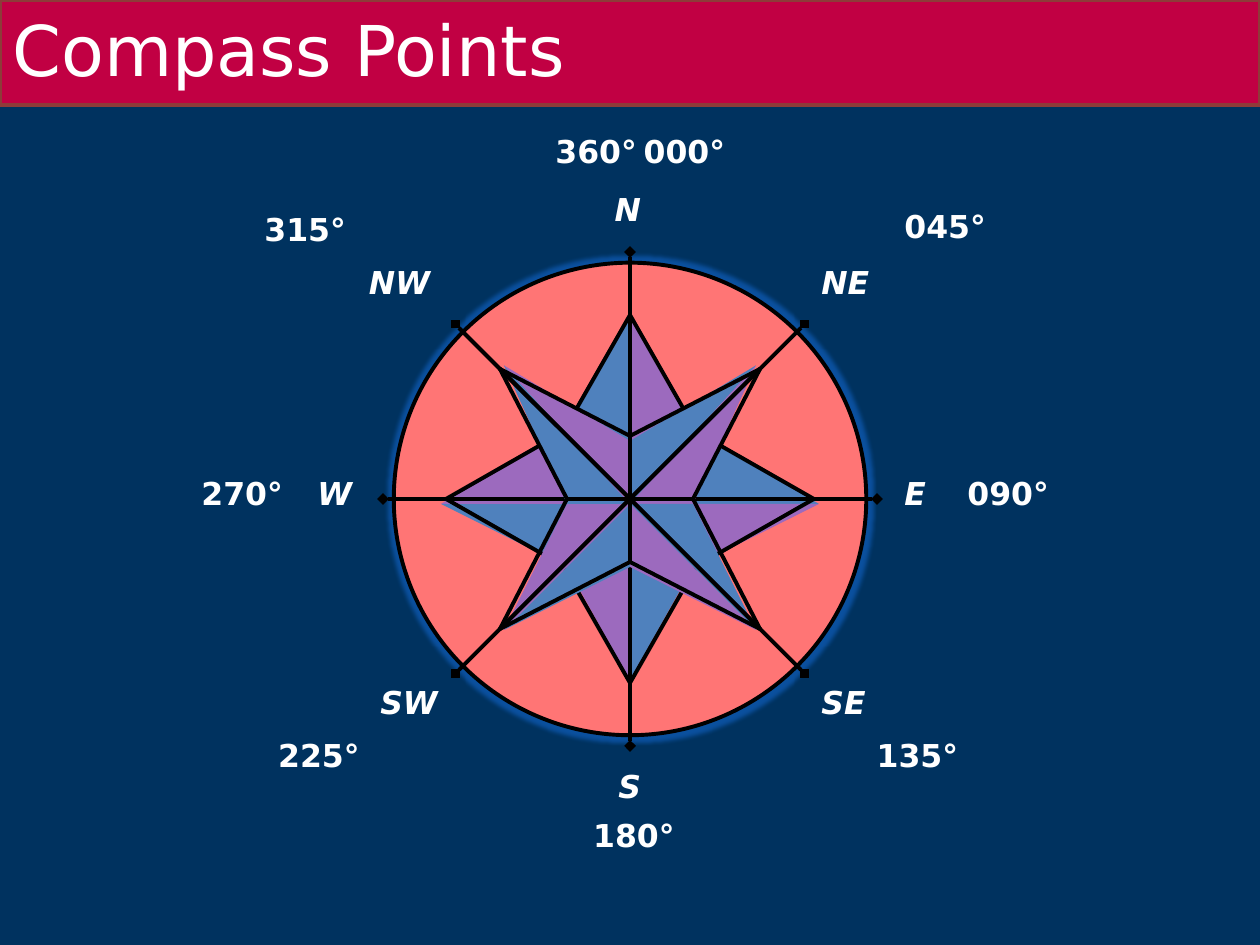
import math
from typing import NamedTuple

import pptx
import pptx.dml.color
import pptx.enum.shapes
import pptx.enum.text
import pptx.oxml
import pptx.oxml.ns
import pptx.util

CELL = pptx.util.Inches(0.1)
COLUMNS, ROWS = 100, 75
CENTRE_COLUMN, CENTRE_ROW = 50, 39.6
DISC_RADIUS, TIP_RADIUS, AXIS_RADIUS = 18.75, 14.6, 19.6
LABEL_ROWS = 4
FONT = "DejaVu Sans"
NAVY, CRIMSON, BROWN, CORAL = "00325F", "C10043", "8E3B39", "FF7575"
BLUE, PURPLE, BLACK, WHITE = "4F81BD", "9C6ABE", "000000", "FFFFFF"
GLOW = "1264C8"


class Point(NamedTuple):
    column: float
    row: float


class Star(NamedTuple):
    first_bearing: int
    shoulder_radius: float


class Label(NamedTuple):
    text: str
    column: float
    row: float
    columns: float
    italic: bool


STARS = [Star(0, 7.5), Star(45, 5)]

NAMES = [
    Label("N", 47.8, 14.6, 4.2, True),
    Label("NE", 64.2, 20.4, 5.9, True),
    Label("E", 70.8, 37.1, 3.7, True),
    Label("SE", 64.2, 53.7, 5.5, True),
    Label("S", 48.1, 60.4, 3.8, True),
    Label("SW", 29.2, 53.7, 6.6, True),
    Label("W", 24.2, 37.1, 4.9, True),
    Label("NW", 28.3, 20.4, 7, True),
]
BEARINGS = [
    Label(text, column, row, 8.9, False)
    for text, column, row in [
        ("000°", 50.1, 10), ("045°", 70.8, 15.9), ("090°", 75.8, 37.1),
        ("135°", 68.6, 57.9), ("180°", 46.1, 64.3), ("225°", 21.1, 57.9),
        ("270°", 15, 37.1), ("315°", 20, 16.2), ("360°", 43.1, 10),
    ]
]


def cells(count: float) -> int:
    return round(count * CELL)


def colour(value: str) -> pptx.dml.color.RGBColor:
    return pptx.dml.color.RGBColor.from_string(value)


def paint(shape, value: str) -> None:
    shape.fill.solid()
    shape.fill.fore_color.rgb = colour(value)


def outline(shape, value: str, points: float) -> None:
    shape.line.color.rgb = colour(value)
    shape.line.width = pptx.util.Pt(points)


def polar(bearing: float, radius: float) -> Point:
    angle = math.radians(bearing)
    return Point(CENTRE_COLUMN + radius * math.sin(angle),
                 CENTRE_ROW - radius * math.cos(angle))


def add_span(para, text: str, size: float, bold: bool = False, italic: bool = False) -> None:
    span = para.add_run()
    span.text = text
    span.font.name = FONT
    span.font.size = pptx.util.Pt(size)
    span.font.bold = bold
    span.font.italic = italic
    span.font.color.rgb = colour(WHITE)


def add_line(shapes, start: Point, end: Point, diamonds: bool = False) -> None:
    line = shapes.add_connector(
        pptx.enum.shapes.MSO_CONNECTOR.STRAIGHT,
        cells(start.column), cells(start.row), cells(end.column), cells(end.row))
    outline(line, BLACK, 2.25)
    properties = line._element.spPr
    pptx.oxml.ns.qn("a:effectLst")
    properties.append(pptx.oxml.parse_xml(
        f'<a:effectLst {pptx.oxml.ns.nsdecls("a")}/>'))
    if diamonds:
        for end_name in ("headEnd", "tailEnd"):
            line.line._get_or_add_ln().append(pptx.oxml.parse_xml(
                f'<a:{end_name} {pptx.oxml.ns.nsdecls("a")} type="diamond"/>'))


def add_facet(shapes, corners: list[Point], fill: str) -> None:
    builder = shapes.build_freeform(corners[0].column, corners[0].row, scale=CELL)
    builder.add_line_segments(corners[1:], close=True)
    facet = builder.convert_to_shape()
    facet.shadow.inherit = False
    paint(facet, fill)
    facet.line.fill.background()


def add_star(page, star: Star) -> None:
    shapes = page.shapes.add_group_shape().shapes
    centre = Point(CENTRE_COLUMN, CENTRE_ROW)
    bearings = [star.first_bearing + 90 * turn for turn in range(4)]
    sides = [(bearing, bearing + side, fill) for bearing in bearings
             for side, fill in ((-45, BLUE), (45, PURPLE))]
    for bearing, shoulder, fill in sides:
        add_facet(shapes, [centre, polar(bearing, TIP_RADIUS),
                           polar(shoulder, star.shoulder_radius)], fill)
    for bearing, shoulder, _ in sides:
        add_line(shapes, polar(bearing, TIP_RADIUS), polar(shoulder, star.shoulder_radius))
    for bearing in bearings[:2]:
        for angle, radius, diamonds in ((bearing, TIP_RADIUS, False),
                                        (bearing + 45, star.shoulder_radius, False),
                                        (bearing, AXIS_RADIUS, True)):
            add_line(shapes, polar(angle, radius), polar(angle + 180, radius), diamonds)


def add_disc(page) -> None:
    disc = page.shapes.add_shape(
        pptx.enum.shapes.MSO_SHAPE.OVAL,
        cells(CENTRE_COLUMN - DISC_RADIUS), cells(CENTRE_ROW - DISC_RADIUS),
        cells(2 * DISC_RADIUS), cells(2 * DISC_RADIUS))
    paint(disc, CORAL)
    outline(disc, BLACK, 2.25)
    disc._element.spPr.append(pptx.oxml.parse_xml(
        f'<a:effectLst {pptx.oxml.ns.nsdecls("a")}><a:glow rad="63500">'
        f'<a:srgbClr val="{GLOW}"><a:alpha val="60000"/></a:srgbClr>'
        '</a:glow></a:effectLst>'))


def add_label(page, label: Label) -> None:
    box = page.shapes.add_textbox(cells(label.column), cells(label.row),
                                  cells(label.columns), cells(LABEL_ROWS))
    frame = box.text_frame
    frame.word_wrap = False
    frame.auto_size = pptx.enum.text.MSO_AUTO_SIZE.SHAPE_TO_FIT_TEXT
    add_span(frame.paragraphs[0], label.text, 18, bold=True, italic=label.italic)


def format_title(page) -> None:
    title = page.shapes.title
    title.left, title.top = 0, 0
    title.width, title.height = cells(COLUMNS), cells(7.7)
    paint(title, CRIMSON)
    outline(title, BROWN, 2)
    frame = title.text_frame
    frame.word_wrap = True
    frame.auto_size = pptx.enum.text.MSO_AUTO_SIZE.SHAPE_TO_FIT_TEXT
    frame.vertical_anchor = pptx.enum.text.MSO_ANCHOR.TOP
    para = frame.paragraphs[0]
    para.alignment = pptx.enum.text.PP_ALIGN.LEFT
    add_span(para, "Compass Points", 40)


def main() -> None:
    deck = pptx.Presentation()
    deck.slide_width, deck.slide_height = cells(COLUMNS), cells(ROWS)
    page = deck.slides.add_slide(deck.slide_layouts.get_by_name("Title Only"))
    paint(page.background, NAVY)
    format_title(page)
    add_disc(page)
    for star in STARS:
        add_star(page, star)
    for label in NAMES + BEARINGS:
        add_label(page, label)
    deck.save("out.pptx")


if __name__ == "__main__":
    main()
